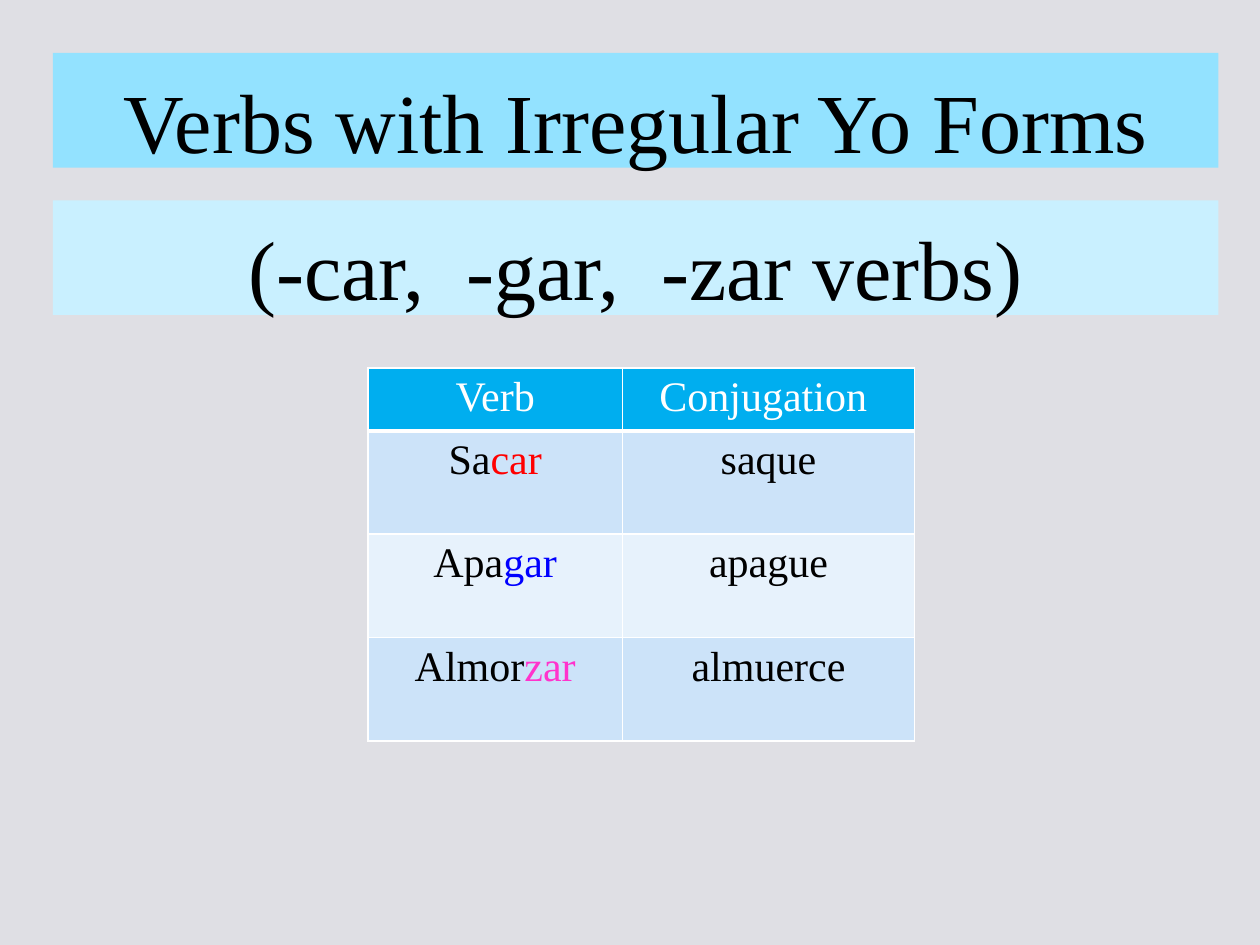
from lxml.etree import SubElement
from pptx import Presentation
from pptx.dml.color import RGBColor
from pptx.enum.shapes import MSO_SHAPE
from pptx.enum.text import MSO_ANCHOR, PP_ALIGN
from pptx.oxml.ns import qn
from pptx.util import Inches, Pt

FONT = "Times New Roman"
COLORS = {
    "background": "DFDFE4",
    "title": "93E2FF",
    "subtitle": "C9F0FF",
    "header": "00AEEF",
    "odd": "CCE3F9",
    "even": "E7F2FC",
    "white": "FFFFFF",
    "black": "000000",
    "car": "FF0000",
    "gar": "0000FF",
    "zar": "FF33CC",
}
# Stem, ending, yo form
VERBS = [
    ("Sa", "car", "saque"),
    ("Apa", "gar", "apague"),
    ("Almor", "zar", "almuerce"),
]


def set_fill(fill, color):
    fill.solid()
    fill.fore_color.rgb = RGBColor.from_string(COLORS[color])


def add_runs(p, parts, size):
    """Write centred (text, color) parts into a paragraph."""
    p.alignment = PP_ALIGN.CENTER
    for text, color in parts:
        r = p.add_run()
        r.text = text
        r.font.name = FONT
        r.font.size = Pt(size)
        r.font.color.rgb = RGBColor.from_string(COLORS[color])


def add_banner(s, top, text, color):
    sp = s.shapes.add_shape(MSO_SHAPE.RECTANGLE, Inches(0.42), Inches(top),
                            Inches(9.25), Inches(0.91))
    sp.shadow.inherit = False
    set_fill(sp.fill, color)
    sp.line.fill.background()
    tf = sp.text_frame
    tf.word_wrap = True
    tf.vertical_anchor = MSO_ANCHOR.TOP
    tf.margin_top, tf.margin_bottom = Inches(0.13), 0
    add_runs(tf.paragraphs[0], [(text, "black")], 48)


def set_borders(cell, bottom=1):
    tc_pr = cell._tc.get_or_add_tcPr()
    widths = {"lnL": 1, "lnR": 1, "lnT": 1, "lnB": bottom}
    for i, (side, width) in enumerate(widths.items()):
        ln = tc_pr.makeelement(qn(f"a:{side}"), {"w": str(Pt(width))})
        fill = SubElement(ln, qn("a:solidFill"))
        SubElement(fill, qn("a:srgbClr"), val=COLORS["white"])
        tc_pr.insert(i, ln)  # borders come before the cell fill


def add_verb_table(s):
    rows = [[[("Verb", "white")], [("Conjugation ", "white")]]]
    rows += [[[(stem, "black"), (ending, ending)], [(yo_form, "black")]]
             for stem, ending, yo_form in VERBS]
    table = s.shapes.add_table(len(rows), 2, Inches(2.92), Inches(2.92),
                               Inches(4.34), Inches(2.95)).table
    for column, width in zip(table.columns, (2.02, 2.32)):
        column.width = Inches(width)
    for i, row in enumerate(rows):
        table.rows[i].height = Inches(0.82 if i else 0.5)
        color = "header" if i == 0 else "odd" if i % 2 else "even"
        for j, parts in enumerate(row):
            cell = table.cell(i, j)
            set_fill(cell.fill, color)
            set_borders(cell, bottom=1 if i else 3)
            add_runs(cell.text_frame.paragraphs[0], parts, 24)


def main():
    prs = Presentation()
    prs.slide_width, prs.slide_height = Inches(10), Inches(7.5)
    s = prs.slides.add_slide(prs.slide_layouts[6])
    set_fill(s.background.fill, "background")

    # Headings and conjugation table
    add_banner(s, 0.42, "Verbs with Irregular Yo Forms", "title")
    add_verb_table(s)
    add_banner(s, 1.59, "(-car,  -gar,  -zar verbs)", "subtitle")

    prs.save("out.pptx")


if __name__ == "__main__":
    main()
